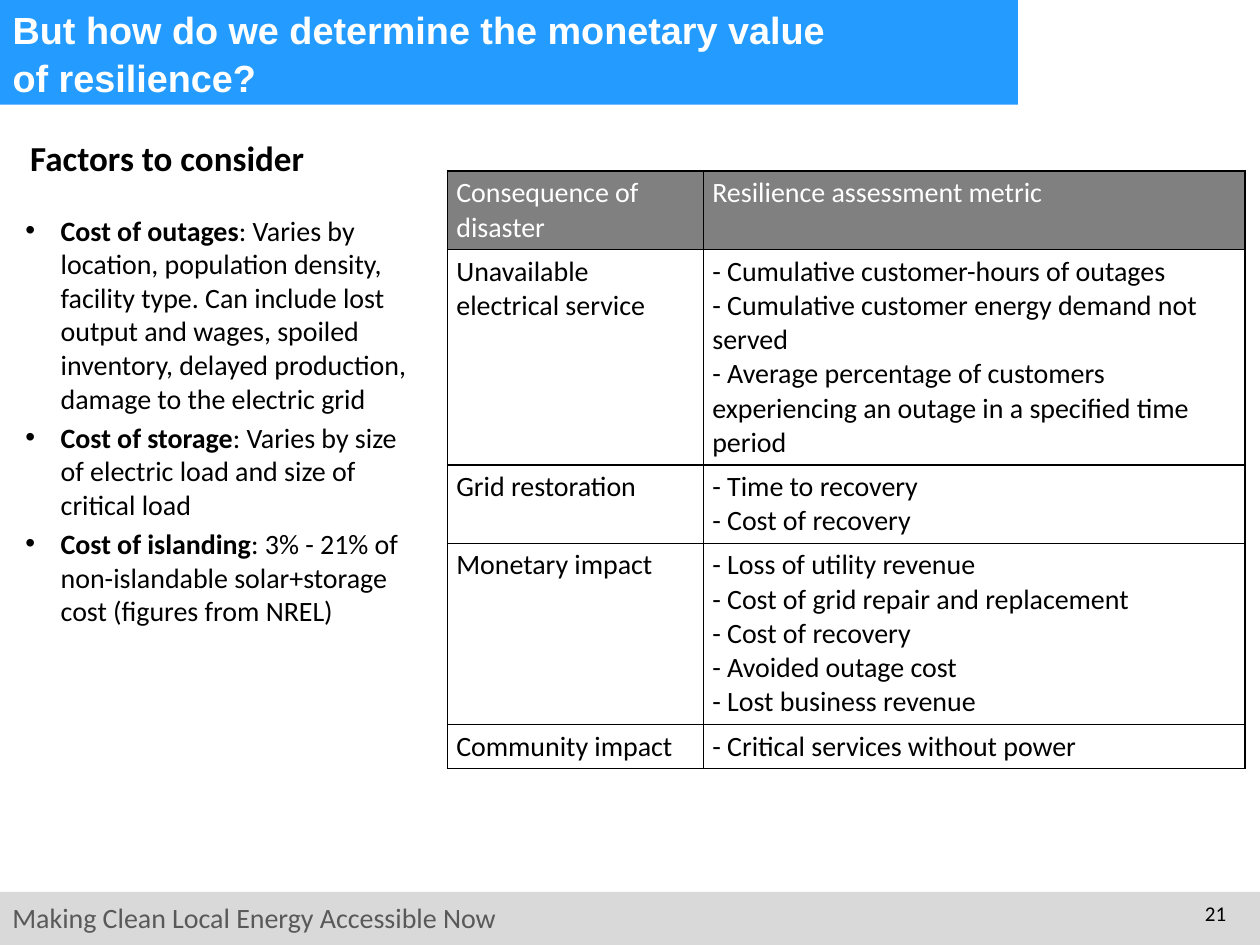
from lxml.etree import SubElement
from pptx import Presentation
from pptx.dml.color import RGBColor
from pptx.enum.shapes import MSO_SHAPE
from pptx.enum.text import MSO_ANCHOR, MSO_AUTO_SIZE, PP_ALIGN
from pptx.oxml.ns import qn
from pptx.util import Cm, Pt

# Content
TITLE = "But how do we determine the monetary value\vof resilience?"
HEADING = "Factors to consider"
TAGLINE = "Making Clean Local Energy Accessible Now"
PAGE = "21"
FACTORS = [
    ("Cost of outages", ": Varies by location, population density, facility type. "
     "Can include lost output and wages, spoiled inventory, delayed production, "
     "damage to the electric grid"),
    ("Cost of storage", ": Varies by size of electric load and size of critical load"),
    ("Cost of islanding", ": 3% - 21% of non-islandable solar+storage cost "
     "(figures from NREL)"),
]
METRICS = [
    ("Consequence of disaster", ["Resilience assessment metric"]),
    ("Unavailable electrical service", [
        "- Cumulative customer-hours of outages",
        "- Cumulative customer energy demand not served",
        "- Average percentage of customers experiencing an outage "
        "in a specified time period"]),
    ("Grid restoration", ["- Time to recovery", "- Cost of recovery"]),
    ("Monetary impact", [
        "- Loss of utility revenue", "- Cost of grid repair and replacement",
        "- Cost of recovery", "- Avoided outage cost", "- Lost business revenue"]),
    ("Community impact", ["- Critical services without power"]),
]

# Layout in centimetres
COLS = [5.16, 10.92]
ROWS = [1.35, 3.63, 1.35, 3.05, 0.76]
TEXT = {"name": "Calibri", "size": Pt(16), "bold": False, "color": "000000"}


def rgb(value):
    return RGBColor.from_string(value)


def style(font, **changes):
    for key, value in {**TEXT, **changes}.items():
        if key == "color":
            font.color.rgb = rgb(value)
        else:
            setattr(font, key, value)


def place(shape, *box):
    for key, value in zip(("left", "top", "width", "height"), box):
        setattr(shape, key, Cm(value))


def bar(color, *box):
    shape = s.shapes.add_shape(MSO_SHAPE.RECTANGLE, *map(Cm, box))
    shape.shadow.inherit = False
    shape.fill.solid()
    shape.fill.fore_color.rgb = rgb(color)
    shape.line.fill.background()


def label(text, box, align=PP_ALIGN.LEFT, **font):
    tf = s.shapes.add_textbox(*map(Cm, box)).text_frame
    tf.word_wrap = True
    p = tf.paragraphs[0]
    p.text, p.alignment = text, align
    style(p.runs[0].font, **font)


def outline(cell):
    tc_pr = cell._tc.get_or_add_tcPr()
    for side in ("lnL", "lnR", "lnT", "lnB"):
        ln = SubElement(tc_pr, qn(f"a:{side}"), w=str(Pt(1)))
        SubElement(SubElement(ln, qn("a:solidFill")), qn("a:srgbClr"), val="000000")


prs = Presentation()
prs.slide_width, prs.slide_height = Cm(25.4), Cm(19.05)
s = prs.slides.add_slide(prs.slide_layouts[1])
title, body = s.placeholders

# Footer and title bands
bar("D9D9D9", 0, 17.98, 25.4, 1.07)
label(TAGLINE, (0, 18.03, 13.13, 0.94), color="595959")
bar("249CFF", 0, 0, 20.52, 2.11)
label(PAGE, (23.7, 18.03, 1.27, 1.02), PP_ALIGN.RIGHT, size=Pt(12))

# Title, brought in front of its band
s.shapes._spTree.append(title._element)
place(title, 0, 0, 20.32, 2.11)
tf = title.text_frame
tf.text = TITLE
tf.auto_size, tf.vertical_anchor = MSO_AUTO_SIZE.NONE, MSO_ANCHOR.MIDDLE
p = tf.paragraphs[0]
p.alignment, p.line_spacing = PP_ALIGN.LEFT, 1.06
for r in p.runs:
    style(r.font, name="Arial", size=Pt(21.6), bold=True, color="FFFFFF")

# Metrics table
frame = s.shapes.add_table(len(ROWS), len(COLS), Cm(9.02), Cm(3.45),
                           Cm(sum(COLS)), Cm(sum(ROWS)))
table = frame.table
table.horz_banding = False
for col, width in zip(table.columns, COLS):
    col.width = Cm(width)
for i, (row, height, (consequence, lines)) in enumerate(zip(table.rows, ROWS, METRICS)):
    row.height = Cm(height)
    for cell, text in zip(row.cells, (consequence, "\n".join(lines))):
        cell.text = text
        cell.margin_left = cell.margin_right = Cm(0.18)
        cell.margin_top = cell.margin_bottom = Cm(0.1)
        outline(cell)
        cell.fill.solid()
        cell.fill.fore_color.rgb = rgb("FFFFFF" if i else "808080")
        for p in cell.text_frame.paragraphs:
            style(p.runs[0].font, color="000000" if i else "FFFFFF")

# Factors list
s.shapes._spTree.append(body._element)
place(body, 0, 4.17, 8.69, 11.94)
tf = body.text_frame
tf.auto_size = MSO_AUTO_SIZE.NONE
for i, parts in enumerate(FACTORS):
    p = tf.add_paragraph() if i else tf.paragraphs[0]
    p_pr = p._p.get_or_add_pPr()
    p_pr.set("marL", str(Cm(0.97)))
    p_pr.set("indent", str(Cm(-0.71)))
    p.space_before = Pt(3.2 if i else 0)
    SubElement(p_pr, qn("a:buFont"), typeface="Arial")
    SubElement(p_pr, qn("a:buChar"), char="•")
    for text, bold in zip(parts, (True, False)):
        r = p.add_run()
        r.text = text
        style(r.font, bold=bold)

label(HEADING, (0.36, 2.62, 7.95, 1.12), size=Pt(20), bold=True)

prs.save("out.pptx")
